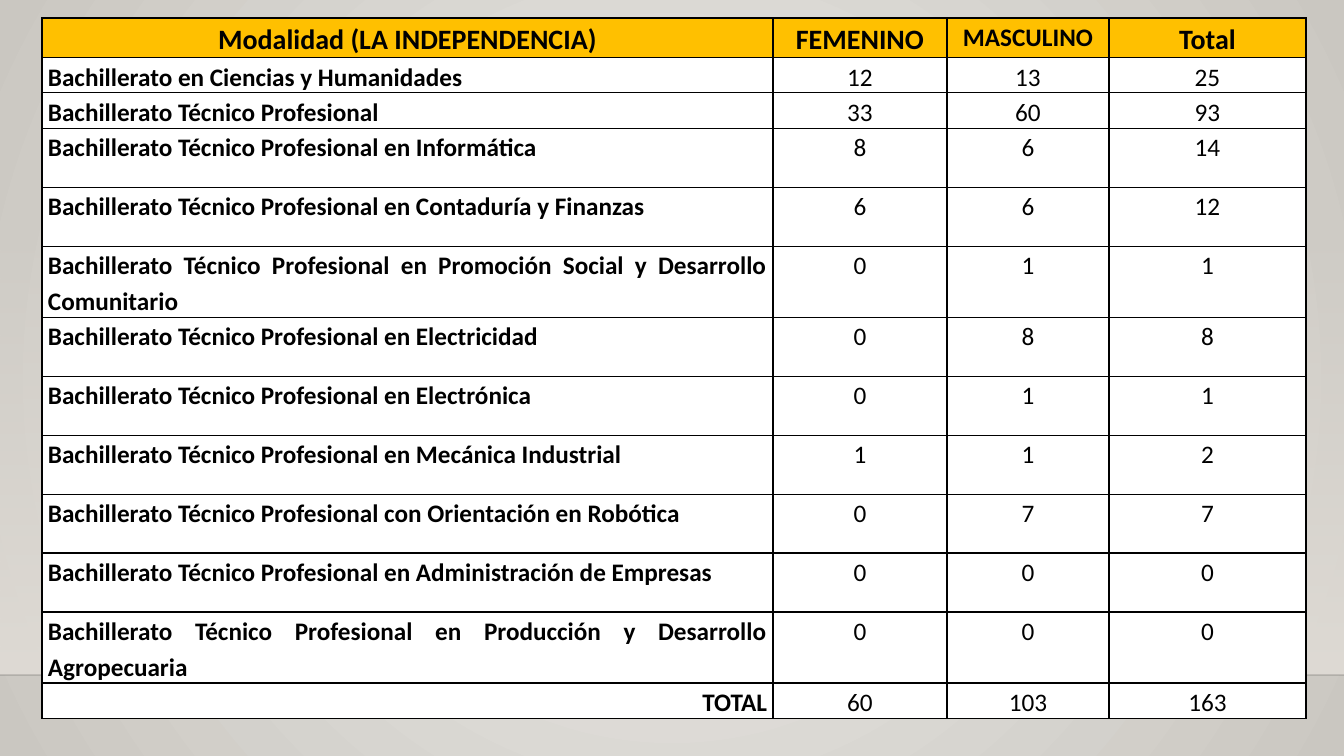
from lxml.etree import SubElement
from pptx import Presentation
from pptx.dml.color import RGBColor
from pptx.enum.shapes import MSO_CONNECTOR, MSO_SHAPE
from pptx.enum.text import PP_ALIGN
from pptx.oxml import parse_xml
from pptx.oxml.ns import qn
from pptx.util import Pt

HEADINGS = [("Modalidad (LA INDEPENDENCIA)", 20), ("FEMENINO", 20),
            ("MASCULINO", 18), ("Total", 20)]
TECHNICAL = "Bachillerato Técnico Profesional"
SINGLE, TALL, TWO_LINE, HEADING = 35, 59, 71, 39
ENROLMENT = [
    ("Bachillerato en Ciencias y Humanidades", 12, 13, 25, SINGLE),
    (TECHNICAL, 33, 60, 93, SINGLE),
    (f"{TECHNICAL} en Informática", 8, 6, 14, TALL),
    (f"{TECHNICAL} en Contaduría y Finanzas", 6, 6, 12, TALL),
    (f"{TECHNICAL} en Promoción Social y Desarrollo Comunitario", 0, 1, 1, TWO_LINE),
    (f"{TECHNICAL} en Electricidad", 0, 8, 8, TALL),
    (f"{TECHNICAL} en Electrónica", 0, 1, 1, TALL),
    (f"{TECHNICAL} en Mecánica Industrial", 1, 1, 2, TALL),
    (f"{TECHNICAL} con Orientación en Robótica", 0, 7, 7, TALL),
    (f"{TECHNICAL} en Administración de Empresas", 0, 0, 0, TALL),
    (f"{TECHNICAL} en Producción y Desarrollo Agropecuaria", 0, 0, 0, TWO_LINE),
    ("TOTAL", 60, 103, 163, SINGLE),
]
COLUMN_WIDTHS = [731, 174, 162, 197]
TABLE_LEFT, TABLE_TOP = 42, 18
SLIDE_WIDTH, SLIDE_HEIGHT = 1344, 756
WALL_TOP, FLOOR_TOP = 223, 675
BLACK, WHITE, AMBER, WALL = "000000", "FFFFFF", "FFC000", "DFDBD5"
RADIAL = ('<a:path path="circle"><a:fillToRect l="50000" t="50000" '
          'r="50000" b="50000"/></a:path>')
DOWNWARD = '<a:lin ang="5400000" scaled="0"/>'


def px(length):
    return round(length * 914400 / 100.8)


def rgb(code):
    return RGBColor.from_string(code)


def set_gradient(fill, start, end, direction, start_alpha=100):
    """Replace the fill's gradient stops and direction."""
    fill.gradient()
    stops = fill._fill._gradFill
    for child in list(stops):
        stops.remove(child)
    made = parse_xml(
        '<a:gradFill xmlns:a="http://schemas.openxmlformats.org/drawingml/2006/main">'
        f'<a:gsLst><a:gs pos="0"><a:srgbClr val="{start}">'
        f'<a:alpha val="{start_alpha * 1000}"/></a:srgbClr></a:gs>'
        f'<a:gs pos="100000"><a:srgbClr val="{end}"/></a:gs></a:gsLst>'
        f'{direction}</a:gradFill>')
    for child in list(made):
        stops.append(child)


def add_backdrop(slide):
    set_gradient(slide.background.fill, "ECEAE7", "CAC7C1", RADIAL)
    wall = slide.shapes.add_shape(MSO_SHAPE.RECTANGLE, 0, px(WALL_TOP),
                                  px(SLIDE_WIDTH), px(FLOOR_TOP - WALL_TOP))
    wall.shadow.inherit = False
    wall.line.fill.background()
    set_gradient(wall.fill, WALL, WALL, DOWNWARD, start_alpha=0)

    floor_edge = slide.shapes.add_connector(
        MSO_CONNECTOR.STRAIGHT, 0, px(FLOOR_TOP), px(SLIDE_WIDTH), px(FLOOR_TOP))
    floor_edge.line.width = Pt(1)
    floor_edge.line.color.rgb = rgb(BLACK)
    tint = floor_edge.line._ln.find(".//" + qn("a:srgbClr"))
    SubElement(tint, qn("a:alpha"), val="20000")
    SubElement(floor_edge._element.spPr, qn("a:effectLst"))


def add_borders(cell):
    properties = cell._tc.get_or_add_tcPr()
    for position, side in enumerate(("lnL", "lnR", "lnT", "lnB")):
        border = SubElement(properties, qn(f"a:{side}"), w=str(Pt(1)))
        paint = SubElement(border, qn("a:solidFill"))
        SubElement(paint, qn("a:srgbClr"), val=BLACK)
        properties.insert(position, border)


def fill_cell(cell, text, align, size=18, bold=True, background=WHITE):
    margins = {"margin_left": px(6), "margin_right": px(6),
               "margin_top": 0, "margin_bottom": 0}
    for name, value in margins.items():
        setattr(cell, name, value)
    cell.fill.solid()
    cell.fill.fore_color.rgb = rgb(background)
    add_borders(cell)
    paragraph = cell.text_frame.paragraphs[0]
    paragraph.alignment = align
    paragraph.line_spacing = 1.15
    run = paragraph.add_run()
    run.text = str(text)
    for name, value in {"name": "Calibri", "size": Pt(size), "bold": bold}.items():
        setattr(run.font, name, value)
    run.font.color.rgb = rgb(BLACK)


def add_enrolment_table(slide):
    heights = [HEADING] + [row[-1] for row in ENROLMENT]
    table = slide.shapes.add_table(
        len(heights), len(COLUMN_WIDTHS), px(TABLE_LEFT), px(TABLE_TOP),
        px(sum(COLUMN_WIDTHS)), px(sum(heights))).table
    table.first_row = table.horz_banding = False
    for column, width in zip(table.columns, COLUMN_WIDTHS):
        column.width = px(width)
    for row, height in zip(table.rows, heights):
        row.height = px(height)

    for column, (heading, size) in enumerate(HEADINGS):
        fill_cell(table.cell(0, column), heading, PP_ALIGN.CENTER, size,
                  background=AMBER)
    for row, (programme, *counts, _) in enumerate(ENROLMENT, start=1):
        align = PP_ALIGN.RIGHT if programme == "TOTAL" else PP_ALIGN.JUSTIFY
        fill_cell(table.cell(row, 0), programme, align)
        for column, count in enumerate(counts, start=1):
            fill_cell(table.cell(row, column), count, PP_ALIGN.CENTER, bold=False)


def main():
    presentation = Presentation()
    presentation.slide_width = px(SLIDE_WIDTH)
    presentation.slide_height = px(SLIDE_HEIGHT)
    slide = presentation.slides.add_slide(presentation.slide_layouts[6])
    add_backdrop(slide)
    add_enrolment_table(slide)
    presentation.save("out.pptx")


if __name__ == "__main__":
    main()
